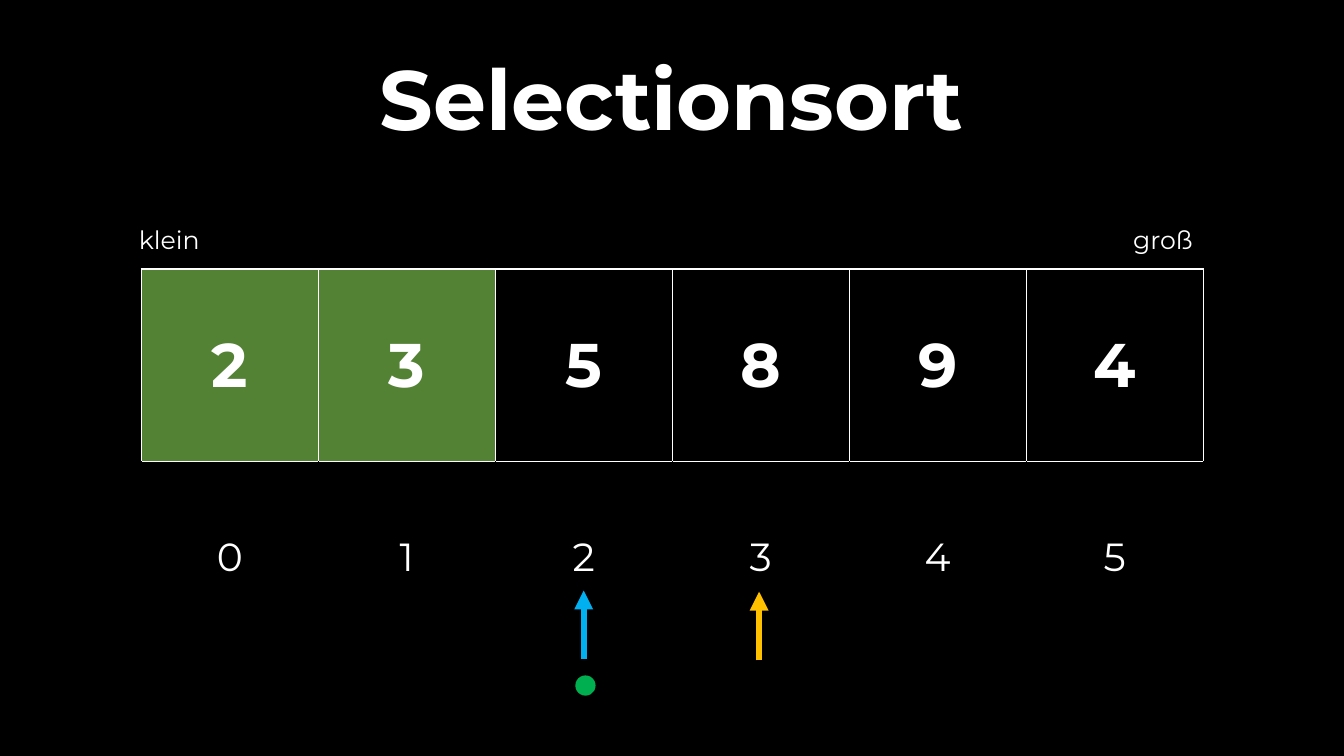
from lxml import etree
from pptx import Presentation
from pptx import util as u
from pptx.dml import color as c
from pptx.enum import shapes, text
from pptx.oxml import ns

THEME = {
    "font": "Montserrat",
    "back": "000000", "ink": "FFFFFF", "done": "548235",
    "blue": "00B0F0", "gold": "FFC000", "green": "00B050",
    "title": 60, "value": 44, "index": 28, "label": 18,
}
ALIGN = text.PP_ALIGN


def rgb(name):
    return c.RGBColor.from_string(THEME[name])


def write(frame, words, size, bold=False, align=ALIGN.CENTER):
    para = frame.paragraphs[0]
    para.alignment = align
    run = para.add_run()
    run.text = words
    form = {"name": THEME["font"], "size": u.Pt(THEME[size]), "bold": bold}
    for key, val in form.items():
        setattr(run.font, key, val)
    run.font.color.rgb = rgb("ink")
    return para


deck = Presentation()
deck.slide_width, deck.slide_height = u.Cm(33.87), u.Cm(19.05)
slide = deck.slides.add_slide(deck.slide_layouts[6])
slide.background.fill.solid()
slide.background.fill.fore_color.rgb = rgb("back")

# Array: values above, indices below
values = [2, 3, 5, 8, 9, 4]
sorted_count = 2
side, high = 4.46, 4.85
grid = slide.shapes.add_table(
    2, len(values), u.Cm(3.56), u.Cm(6.78),
    u.Cm(side * len(values)), u.Cm(high * 2)).table
for key in ("first_row", "horz_banding"):
    setattr(grid, key, False)
for col, value in enumerate(values):
    for row, (word, size) in enumerate([(value, "value"), (col, "index")]):
        cell = grid.cell(row, col)
        cell.vertical_anchor = text.MSO_ANCHOR.MIDDLE
        write(cell.text_frame, str(word), size, bold=row == 0)
        # Only the index row's top edge is white
        props = cell._tc.get_or_add_tcPr()
        for edge in "LRTB":
            hue = "ink" if row == 0 or edge == "T" else "back"
            line = etree.SubElement(props, ns.qn("a:ln" + edge), w=str(u.Pt(1)))
            fill = etree.SubElement(line, ns.qn("a:solidFill"))
            etree.SubElement(fill, ns.qn("a:srgbClr"), val=THEME[hue])
        if row == 0 and col < sorted_count:
            cell.fill.solid()
            cell.fill.fore_color.rgb = rgb("done")
        else:
            cell.fill.background()

# Title and end labels
boxes = [
    ("groß", "label", ALIGN.RIGHT, 26.47, 5.54, 3.84, 1.02),
    ("klein", "label", ALIGN.LEFT, 3.25, 5.54, 3.84, 1.02),
    ("Selectionsort", "title", ALIGN.CENTER, 0.38, 0.79, 33.1, 3.61),
]
for words, size, align, *place in boxes:
    frame = slide.shapes.add_textbox(*map(u.Cm, place)).text_frame
    frame.word_wrap = True
    head = size == "title"
    para = write(frame, words, size, head, align)
    if head:
        frame.vertical_anchor = text.MSO_ANCHOR.MIDDLE
        para.line_spacing = 0.9
        para.space_before = u.Pt(10)

# Pointers to the current indices
for hue, x, top in [("blue", 14.71, 14.88), ("gold", 19.13, 14.91)]:
    arrow = slide.shapes.add_connector(
        shapes.MSO_CONNECTOR.STRAIGHT,
        u.Cm(x), u.Cm(top + 1.73), u.Cm(x), u.Cm(top))
    arrow.line.color.rgb = rgb(hue)
    arrow.line.width = u.Pt(4.5)
    etree.SubElement(arrow.line._get_or_add_ln(), ns.qn("a:tailEnd"), type="triangle")
    etree.SubElement(arrow._element.spPr, ns.qn("a:effectLst"))

# Marker of the smallest value so far
dot = slide.shapes.add_shape(
    shapes.MSO_SHAPE.OVAL, u.Cm(14.5), u.Cm(17.02), u.Cm(0.51), u.Cm(0.51))
dot.shadow.inherit = False
dot.fill.solid()
dot.fill.fore_color.rgb = rgb("green")
dot.line.fill.background()

deck.save("out.pptx")
